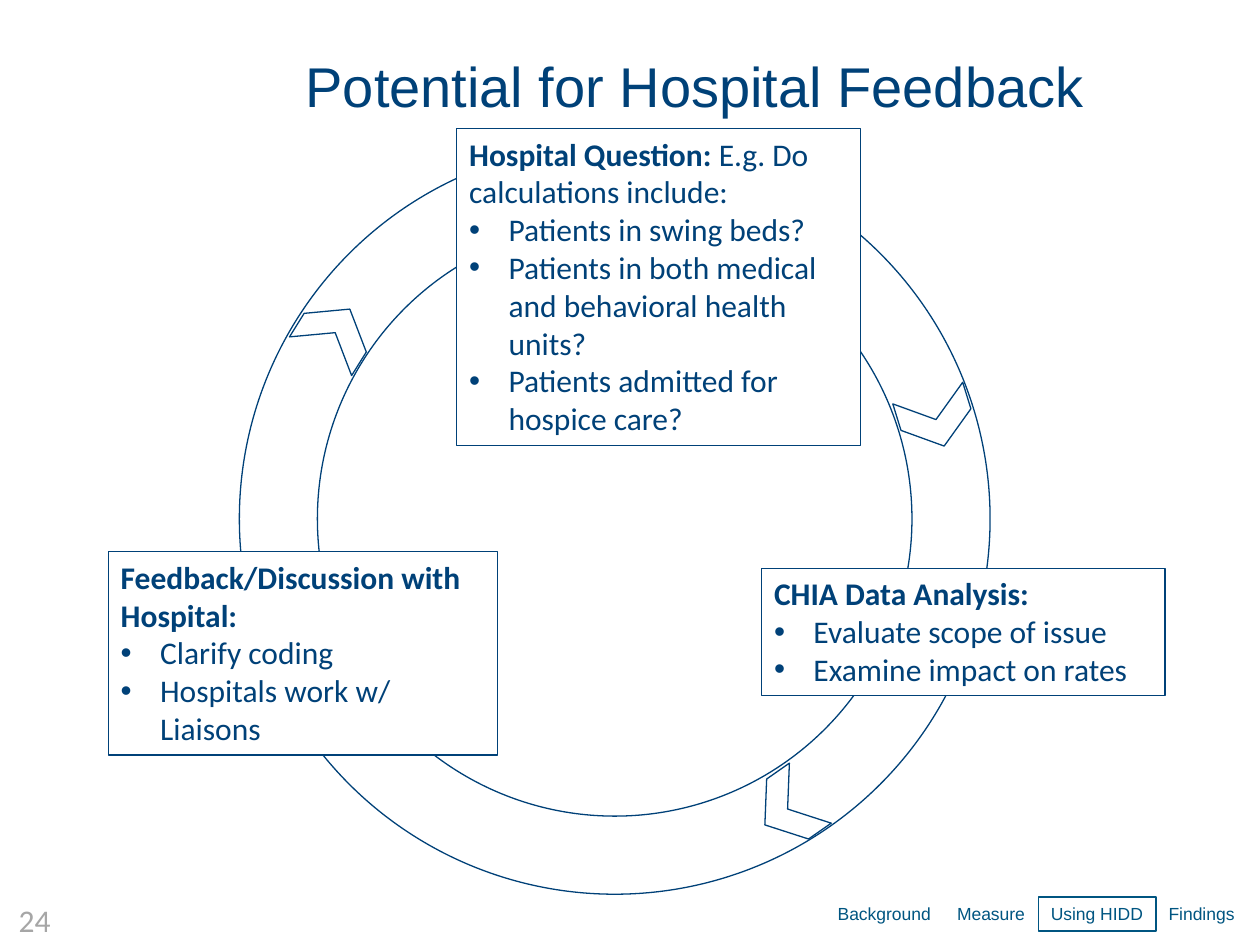
import pptx
import pptx.util
import pptx.dml.color
import pptx.enum.shapes
import pptx.enum.text
from dataclasses import dataclass
from lxml import etree

Pt = pptx.util.Pt
Shape = pptx.enum.shapes.MSO_SHAPE
Align = pptx.enum.text.PP_ALIGN
Anchor = pptx.enum.text.MSO_ANCHOR
Fit = pptx.enum.text.MSO_AUTO_SIZE


@dataclass(frozen=True)
class Theme:
    navy: str = "004178"
    teal: str = "005581"
    gray: str = "A6A6A6"
    white: str = "FFFFFF"
    head: str = "Arial"
    body: str = "Calibri"
    large: int = 32
    medium: int = 18
    small: int = 10
    line: float = 0.75
    indent: float = 22.5


def paint(color):
    return pptx.dml.color.RGBColor.from_string(color)


def apply(target, values):
    for name, value in values.items():
        setattr(target, name, value)


class Deck:
    def __init__(self, theme, wide, high):
        self.theme = theme
        self.file = pptx.Presentation()
        apply(self.file, {"slide_width": Pt(wide), "slide_height": Pt(high)})
        self.slide = self.file.slides.add_slide(self.file.slide_layouts[6])

    def shape(self, kind, box, line, fill=None, turn=0, adjust=None):
        item = self.slide.shapes.add_shape(kind, *map(Pt, box))
        item.shadow.inherit = False
        item.rotation = turn
        if fill:
            item.fill.solid()
            item.fill.fore_color.rgb = paint(fill)
        else:
            item.fill.background()
        item.line.color.rgb = paint(line)
        item.line.width = Pt(self.theme.line)
        if adjust is not None:
            item.adjustments[0] = adjust
        return item

    def frame(self, item, wrap=True, fit=Fit.SHAPE_TO_FIT_TEXT, anchor=Anchor.TOP):
        apply(item.text_frame, {"word_wrap": wrap, "auto_size": fit,
                                "vertical_anchor": anchor})
        return item.text_frame

    def text(self, para, words, size, face, color, bold=False, align=Align.LEFT):
        para.alignment = align
        run = para.add_run()
        run.text = words
        apply(run.font, {"size": Pt(size), "name": face, "bold": bold})
        run.font.color.rgb = paint(color)

    def label(self, words, box, size, face, color, align=Align.LEFT, **format):
        item = self.slide.shapes.add_textbox(*map(Pt, box))
        frame = self.frame(item, **format)
        self.text(frame.paragraphs[0], words, size, face, color, align=align)

    def bullet(self, para):
        props = para._p.get_or_add_pPr()
        gap = Pt(self.theme.indent)
        props.set("marL", str(gap))
        props.set("indent", str(-gap))
        for tag, key, value in (("buFont", "typeface", "Arial"),
                                ("buChar", "char", "•")):
            etree.SubElement(props, pptx.oxml.ns.qn("a:" + tag)).set(key, value)

    def card(self, box, head, lead, points):
        t = self.theme
        item = self.shape(Shape.RECTANGLE, box, t.navy, t.white)
        frame = self.frame(item)
        style = (t.medium, t.body, t.navy)
        first = frame.paragraphs[0]
        self.text(first, head, *style, bold=True)
        if lead:
            self.text(first, lead, *style)
        for point in points:
            para = frame.add_paragraph()
            self.bullet(para)
            self.text(para, point, *style)

    def tab(self, words, left, wide, active):
        t = self.theme
        box = (left, 512.6, wide, 19.4)
        style = (t.small, t.head, t.teal)
        if active:
            item = self.shape(Shape.RECTANGLE, box, t.teal)
            frame = self.frame(item, wrap=False)
            self.text(frame.paragraphs[0], words, *style)
        else:
            self.label(words, box, *style, wrap=False)


def main():
    t = Theme()
    deck = Deck(t, 720, 540)

    # Page number and title
    deck.label("24", (0, 511.2, 36, 29), t.medium, t.body, t.gray,
               Align.RIGHT, wrap=False)
    deck.label("Potential for Hospital Feedback", (15, 15, 612, 67),
               t.large, t.head, t.navy, Align.RIGHT,
               fit=Fit.NONE, anchor=Anchor.MIDDLE)

    # Cycle ring
    deck.shape(Shape.DONUT, (136.8, 82, 429, 429), t.navy, adjust=0.104)

    # Direction marks on the ring
    for left, top, turn in ((519, 218.9, 72.8), (434.2, 441.4, 145.1),
                            (175.7, 169.2, 301.9)):
        deck.shape(Shape.CHEVRON, (left, top, 31.7, 41.8), t.navy, turn=turn)

    # Steps of the cycle
    cards = (
        ((261, 73.4, 230.6, 181.4), "Hospital Question:",
         " E.g. Do calculations include:",
         ("Patients in swing beds?",
          "Patients in both medical and behavioral health units?",
          "Patients admitted for hospice care?")),
        ((435.2, 324.7, 230.6, 72.7), "CHIA Data Analysis:", "",
         ("Evaluate scope of issue", "Examine impact on rates")),
        ((61.9, 315.2, 222.5, 116.3), "Feedback/Discussion with Hospital:", "",
         ("Clarify coding", "Hospitals work w/ Liaisons")),
    )
    for card in cards:
        deck.card(*card)

    # Section tabs
    left = 471.6
    for words, wide in (("Background", 68.2), ("Measure", 53.6),
                        ("Using HIDD", 67.3), ("Findings", 52.6)):
        deck.tab(words, left, wide, words == "Using HIDD")
        left += wide

    deck.file.save("out.pptx")


if __name__ == "__main__":
    main()
